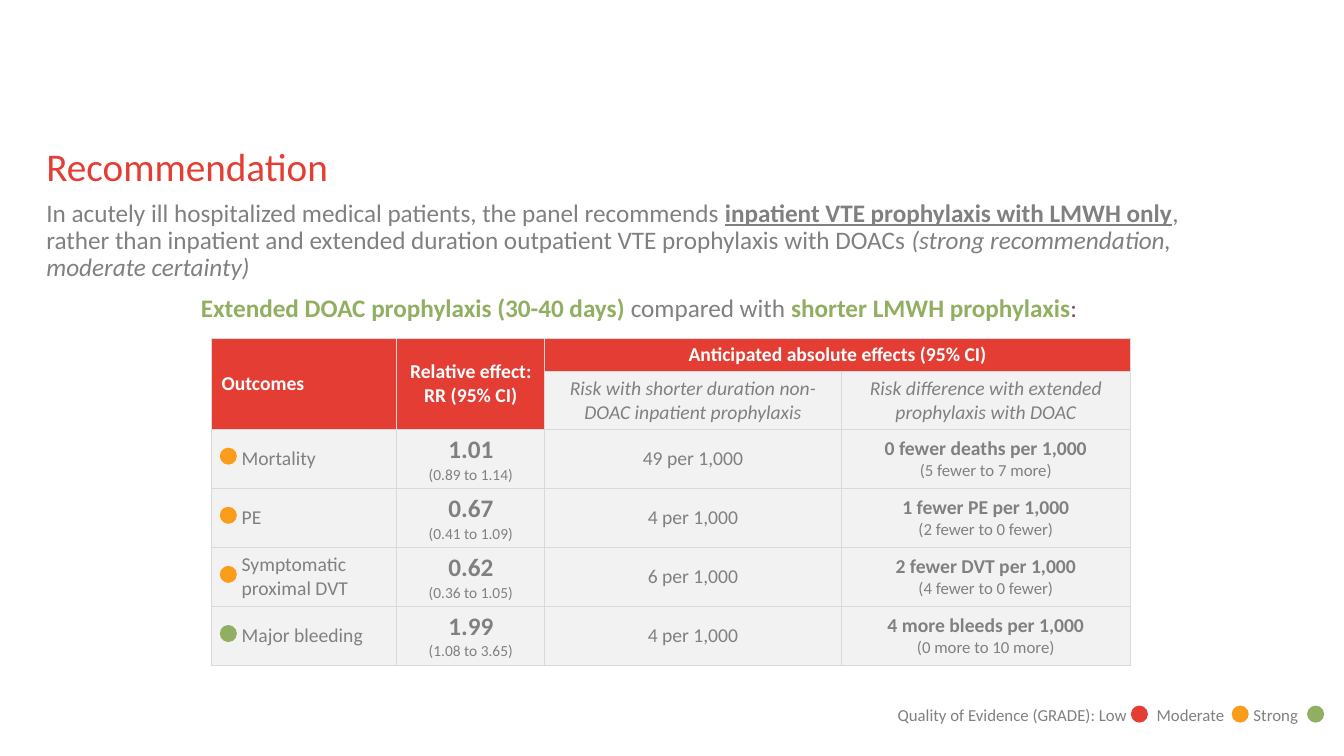
from lxml import etree
from pptx import Presentation
from pptx.dml.color import RGBColor
from pptx.enum import shapes, text
from pptx.oxml import ns
from pptx.util import Cm, Pt

RED = RGBColor(0xE4, 0x3D, 0x33)
ORANGE = RGBColor(0xFA, 0x9D, 0x1C)
GREEN = RGBColor(0x91, 0xAF, 0x61)
GREY = RGBColor(0x80, 0x80, 0x80)
PLUM = RGBColor(0x72, 0x51, 0x72)
WHITE = RGBColor(0xFF, 0xFF, 0xFF)
PALE = RGBColor(0xF2, 0xF2, 0xF2)
BORDER = "D9D9D9"

TITLE = "Recommendation"
ADVICE = [
    ("In acutely ill hospitalized medical patients, the panel recommends ", {}),
    ("inpatient VTE prophylaxis with LMWH only", {"bold": True, "underline": True}),
    (", rather than inpatient and extended duration outpatient VTE prophylaxis with DOACs ", {}),
    ("(strong recommendation, moderate certainty)", {"italic": True}),
]
COMPARISON = [
    ("Extended DOAC prophylaxis (30-40 days) ", {"color": GREEN, "bold": True}),
    ("compared with ", {}),
    ("shorter LMWH prophylaxis", {"color": GREEN, "bold": True}),
    (":", {"color": PLUM}),
]
HEADINGS = ["Outcomes", "Relative effect: RR (95% CI)", "Anticipated absolute effects (95% CI)"]
SUBHEADINGS = [
    "Risk with shorter duration non-DOAC inpatient prophylaxis",
    "Risk difference with extended prophylaxis with DOAC",
]
OUTCOMES = [
    ("Mortality", ORANGE, "1.01", "(0.89 to 1.14)", "49 per 1,000",
     "0 fewer deaths per 1,000", "(5 fewer to 7 more)"),
    ("PE", ORANGE, "0.67", "(0.41 to 1.09)", "4 per 1,000",
     "1 fewer PE per 1,000", "(2 fewer to 0 fewer)"),
    ("Symptomatic proximal DVT", ORANGE, "0.62", "(0.36 to 1.05)", "6 per 1,000",
     "2 fewer DVT per 1,000", "(4 fewer to 0 fewer)"),
    ("Major bleeding", GREEN, "1.99", "(1.08 to 3.65)", "4 per 1,000",
     "4 more bleeds per 1,000", "(0 more to 10 more)"),
]
LEGEND = "Quality of Evidence (GRADE): Low\tModerate\tStrong"
LEGEND_TABS = [6.53, 8.97]
LEGEND_DOTS = [(28.5, RED), (31.04, ORANGE), (32.94, GREEN)]

COLUMN_WIDTHS = [4.67, 3.73, 7.47, 7.29]
ROW_HEIGHTS = [0.84, 1.46] + [1.48] * len(OUTCOMES)
TABLE_LEFT, TABLE_TOP = 5.33, 8.52
DOT_SIZE = 0.43
FIRST_DOT_TOP, DOT_STEP = 11.28, 1.49


def add_span(para, words, size, color=GREY, bold=False, italic=False, underline=False):
    """Append one formatted run to a paragraph."""
    span = para.add_run()
    span.text = words
    font = span.font
    font.name, font.size = "Calibri", Pt(size)
    font.bold, font.italic, font.underline = bold, italic, underline
    font.color.rgb = color


def clear_margins(frame):
    """Remove a frame's insets, wrap its text and anchor it at the top."""
    frame.margin_left = frame.margin_right = frame.margin_top = frame.margin_bottom = 0
    frame.word_wrap = True
    frame.vertical_anchor = text.MSO_ANCHOR.TOP


def add_dot(page, left, top, color):
    """Draw one evidence-quality dot."""
    dot = page.shapes.add_shape(shapes.MSO_SHAPE.OVAL, Cm(left), Cm(top), Cm(DOT_SIZE), Cm(DOT_SIZE))
    dot.shadow.inherit = False
    dot.fill.solid()
    dot.fill.fore_color.rgb = color
    dot.line.fill.background()


def style_cell(cell, fill):
    """Give a cell its borders, fill and middle anchor."""
    properties = cell._tc.get_or_add_tcPr()
    for side in ("a:lnL", "a:lnR", "a:lnT", "a:lnB"):
        line = etree.SubElement(properties, ns.qn(side), w=str(Pt(1)))
        solid = etree.SubElement(line, ns.qn("a:solidFill"))
        etree.SubElement(solid, ns.qn("a:srgbClr"), val=BORDER)
    cell.fill.solid()
    cell.fill.fore_color.rgb = fill
    cell.vertical_anchor = text.MSO_ANCHOR.MIDDLE


def fill_cell(cell, lines, centred=True):
    """Write (words, size, format) lines into a cell, one paragraph each."""
    for index, (words, size, style) in enumerate(lines):
        frame = cell.text_frame
        para = frame.add_paragraph() if index else frame.paragraphs[0]
        para.alignment = text.PP_ALIGN.CENTER if centred else text.PP_ALIGN.LEFT
        add_span(para, words, size, **style)


def add_title(page):
    """Place and format the title."""
    title = page.shapes.title
    title.left, title.top, title.width, title.height = Cm(1.17), Cm(3.73), Cm(30.48), Cm(1.17)
    clear_margins(title.text_frame)
    para = title.text_frame.paragraphs[0]
    para.alignment, para.line_spacing = text.PP_ALIGN.LEFT, 0.9
    add_span(para, TITLE, 28, RED)


def add_advice(page):
    """Write the recommendation and the comparison line."""
    box = page.shapes.add_textbox(Cm(1.17), Cm(5.05), Cm(29.87), Cm(2.31))
    frame = box.text_frame
    clear_margins(frame)
    advice, comparison = frame.paragraphs[0], frame.add_paragraph()
    comparison.alignment, comparison.space_before = text.PP_ALIGN.CENTER, Pt(10)
    for para, spans in ((advice, ADVICE), (comparison, COMPARISON)):
        para.line_spacing = 0.9
        for words, style in spans:
            add_span(para, words, 18, **style)


def add_outcome_table(page):
    """Build the outcome table with its row dots."""
    table = page.shapes.add_table(
        len(ROW_HEIGHTS), len(COLUMN_WIDTHS), Cm(TABLE_LEFT), Cm(TABLE_TOP),
        Cm(sum(COLUMN_WIDTHS)), Cm(sum(ROW_HEIGHTS))).table
    for column, width in zip(table.columns, COLUMN_WIDTHS):
        column.width = Cm(width)
    for row, height in zip(table.rows, ROW_HEIGHTS):
        row.height = Cm(height)
    for row in range(len(ROW_HEIGHTS)):
        for column in range(len(COLUMN_WIDTHS)):
            heading = row == 0 or (row == 1 and column < 2)
            style_cell(table.cell(row, column), RED if heading else PALE)
    for first, last in (((0, 0), (1, 0)), ((0, 1), (1, 1)), ((0, 2), (0, 3))):
        table.cell(*first).merge(table.cell(*last))

    for column, words in enumerate(HEADINGS):
        fill_cell(table.cell(0, column), [(words, 14, {"color": WHITE, "bold": True})], column > 0)
    for column, words in enumerate(SUBHEADINGS, 2):
        fill_cell(table.cell(1, column), [(words, 14, {"italic": True})])
    strong = {"bold": True}
    for index, (name, color, ratio, interval, risk, change, spread) in enumerate(OUTCOMES):
        cells = table.rows[index + 2].cells
        cells[0].margin_left = Cm(0.76)
        fill_cell(cells[0], [(name, 14, {})], False)
        fill_cell(cells[1], [(ratio, 18, strong), (interval, 11, {})])
        fill_cell(cells[2], [(risk, 14, {})])
        fill_cell(cells[3], [(change, 14, strong), (spread, 12, {})])
        add_dot(page, TABLE_LEFT + 0.21, FIRST_DOT_TOP + index * DOT_STEP, color)


def add_legend(page):
    """Write the evidence-quality legend and its dots."""
    box = page.shapes.add_textbox(Cm(22.37), Cm(17.63), Cm(11.5), Cm(0.76))
    box.text_frame.word_wrap = True
    para = box.text_frame.paragraphs[0]
    tabs = etree.SubElement(para._p.get_or_add_pPr(), ns.qn("a:tabLst"))
    for stop in LEGEND_TABS:
        etree.SubElement(tabs, ns.qn("a:tab"), pos=str(Cm(stop)), algn="l")
    add_span(para, LEGEND, 12)
    for left, color in LEGEND_DOTS:
        add_dot(page, left, 17.78, color)


def main():
    """Build the recommendation slide."""
    deck = Presentation()
    deck.slide_width, deck.slide_height = Cm(33.87), Cm(19.05)
    page = deck.slides.add_slide(deck.slide_layouts[5])
    add_title(page)
    add_advice(page)
    add_outcome_table(page)
    add_legend(page)
    deck.save("out.pptx")


if __name__ == "__main__":
    main()
